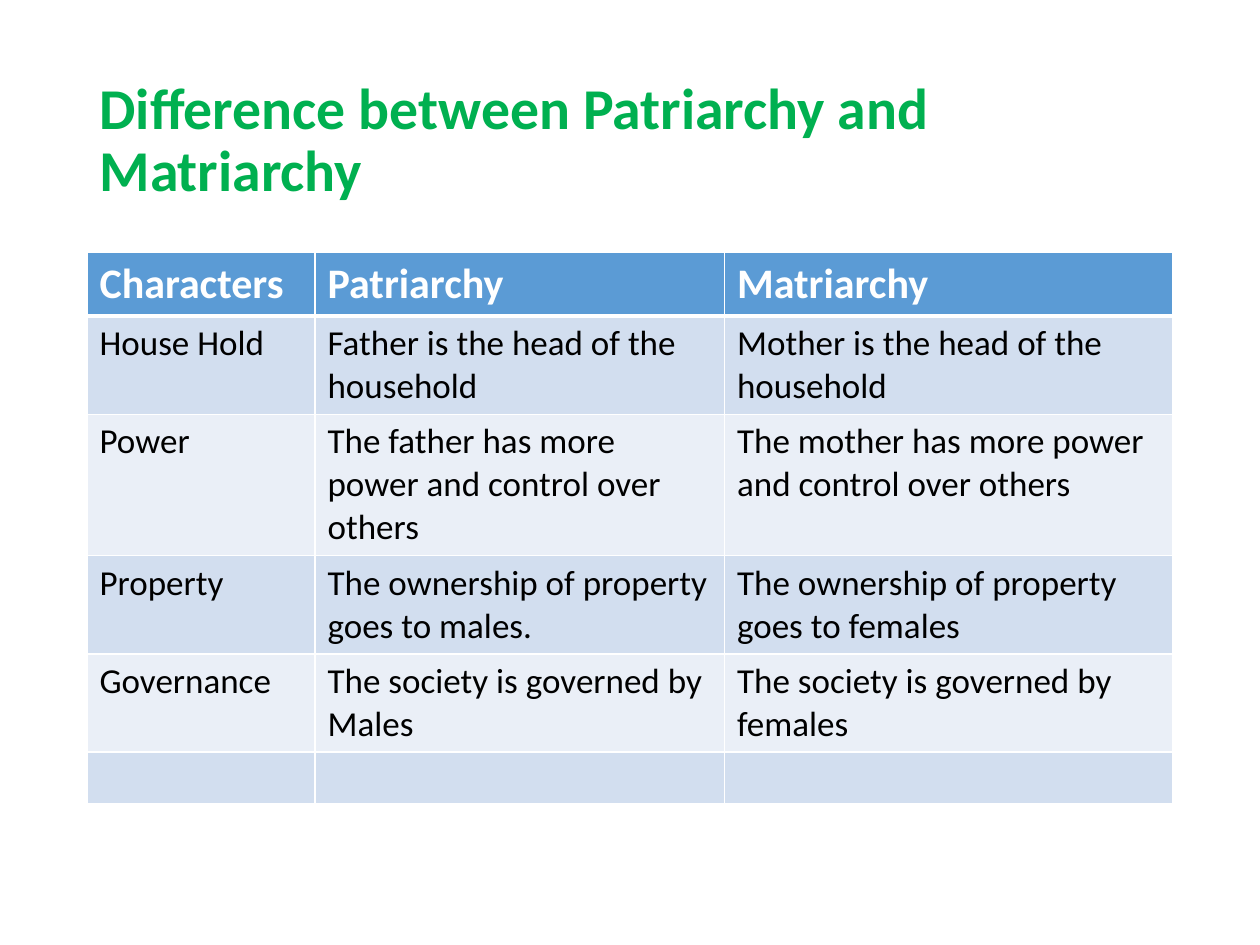
from dataclasses import dataclass

from lxml.etree import SubElement
from pptx import Presentation
from pptx.dml.color import RGBColor
from pptx.enum.text import MSO_ANCHOR, MSO_AUTO_SIZE, PP_ALIGN
from pptx.oxml.ns import qn
from pptx.util import Inches, Pt


@dataclass(frozen=True)
class Theme:
    font: str = "Calibri"
    title: str = "00B050"
    header: str = "5B9BD5"
    bands: tuple[str, str] = ("D2DEEF", "EAEFF7")
    light: str = "FFFFFF"
    dark: str = "000000"
    title_size: int = 33
    header_size: int = 24
    body_size: int = 20
    rule: int = 1
    header_rule: int = 3


@dataclass(frozen=True)
class RowStyle:
    fill: str
    color: str
    size: int
    bold: bool
    top: int
    bottom: int


THEME = Theme()
LEFT, WIDTH = 0.69, 8.62
TABLE_TOP, TABLE_HEIGHT = 2, 4.31
COLUMN_WIDTHS = (1.81, 3.25, 3.56)
ROW_HEIGHT = 0.41
ROWS = (
    ("Characters", "Patriarchy", "Matriarchy"),
    ("House Hold", "Father is the head of the household",
     "Mother is the head of the household"),
    ("Power", "The father has more power and control over others",
     "The mother has more power and control over others"),
    ("Property", "The ownership of property goes to males.",
     "The ownership of property goes to females"),
    ("Governance", "The society is governed by Males",
     "The society is governed by females"),
    ("", "", ""),
)


def add_text(p, text: str, color: str, size: int, bold: bool) -> None:
    r = p.add_run()
    r.text = text
    for name, value in {"name": THEME.font, "size": Pt(size), "bold": bold}.items():
        setattr(r.font, name, value)
    r.font.color.rgb = RGBColor.from_string(color)


def set_borders(cell, top: int, bottom: int) -> None:
    """Rule all four sides; must run before the fill, which follows them in the XML."""
    props = cell._tc.get_or_add_tcPr()
    widths = {"a:lnL": THEME.rule, "a:lnR": THEME.rule, "a:lnT": top, "a:lnB": bottom}
    for tag, width in widths.items():
        line = SubElement(props, qn(tag), w=str(Pt(width)))
        fill = SubElement(line, qn("a:solidFill"))
        SubElement(fill, qn("a:srgbClr"), val=THEME.light)


def row_style(index: int) -> RowStyle:
    if index == 0:
        return RowStyle(THEME.header, THEME.light, THEME.header_size, True,
                        THEME.rule, THEME.header_rule)
    return RowStyle(THEME.bands[(index - 1) % 2], THEME.dark, THEME.body_size, False,
                    THEME.header_rule if index == 1 else THEME.rule, THEME.rule)


def fill_cell(cell, text: str, style: RowStyle) -> None:
    set_borders(cell, style.top, style.bottom)
    cell.fill.solid()
    cell.fill.fore_color.rgb = RGBColor.from_string(style.fill)
    if text:
        add_text(cell.text_frame.paragraphs[0], text, style.color, style.size, style.bold)


def format_title(sp, text: str) -> None:
    box = {"left": LEFT, "top": 0.4, "width": WIDTH, "height": 1.45}
    for name, value in box.items():
        setattr(sp, name, Inches(value))
    tf = sp.text_frame
    frame = {"word_wrap": True, "auto_size": MSO_AUTO_SIZE.NONE,
             "vertical_anchor": MSO_ANCHOR.MIDDLE}
    for name, value in frame.items():
        setattr(tf, name, value)
    p = tf.paragraphs[0]
    p.alignment, p.line_spacing = PP_ALIGN.LEFT, 0.9
    add_text(p, text, THEME.title, THEME.title_size, True)


def add_comparison(slide) -> None:
    frame = slide.shapes.add_table(
        len(ROWS), len(COLUMN_WIDTHS), Inches(LEFT), Inches(TABLE_TOP),
        Inches(WIDTH), Inches(TABLE_HEIGHT))
    table = frame.table
    for column, width in zip(table.columns, COLUMN_WIDTHS):
        column.width = Inches(width)
    for index, (row, texts) in enumerate(zip(table.rows, ROWS)):
        row.height = Inches(ROW_HEIGHT)
        for cell, text in zip(row.cells, texts):
            fill_cell(cell, text, row_style(index))
    frame.height = Inches(TABLE_HEIGHT)


def main() -> None:
    prs = Presentation()
    prs.slide_width, prs.slide_height = Inches(10), Inches(7.5)
    s = prs.slides.add_slide(prs.slide_layouts.get_by_name("Title Only"))
    format_title(s.shapes.title, "Difference between Patriarchy and Matriarchy")
    add_comparison(s)
    prs.save("out.pptx")


if __name__ == "__main__":
    main()
